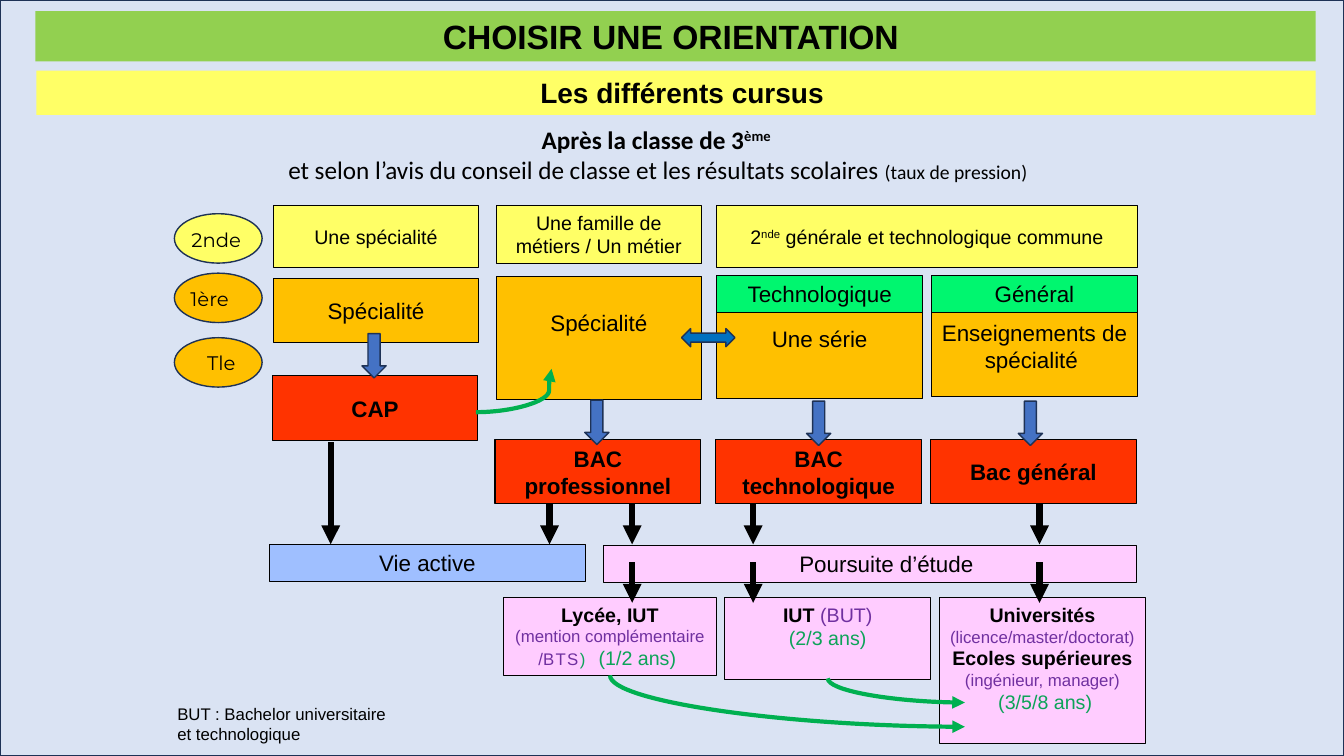
from lxml.etree import SubElement
from pptx import Presentation
from pptx.dml.color import RGBColor
from pptx.enum.shapes import MSO_CONNECTOR as Link, MSO_SHAPE as Preset
from pptx.enum.text import MSO_ANCHOR as Anchor, MSO_AUTO_SIZE as AutoSize, PP_ALIGN as Align
from pptx.oxml.ns import qn
from pptx.util import Inches, Pt

WIDTH, HEIGHT = 13.33, 7.5

# Grid: one column per course of study, one row per stage
CAP, PRO, TECH, GENERAL = 2.71, 4.92, 7.11, 9.24
COLUMN = 2.04
SECOND, FIRST, DIPLOMA, OUTCOME, STUDIES = 2.04, 2.73, 4.36, 5.4, 5.93
DIPLOMA_HEIGHT, BAR_HEIGHT = 0.64, 0.37
DIPLOMA_END = DIPLOMA + DIPLOMA_HEIGHT

BLACK, NAVY = "000000", "1E3256"
YELLOW, ORANGE, RED, PINK = "FFFF66", "FFC000", "FF3300", "FFCCFF"
MINT, GREEN, PURPLE = "00F66F", "00B050", "7030A0"

DETAIL = dict(size=12, color=PURPLE, bold=False)
YEARS = dict(color="0DA358", bold=False)
RAISED = dict(baseline=30000)


def color_of(code):
    return RGBColor.from_string(code)


def write(shape, *paragraphs, size=16, color=BLACK, bold=False, font="Arial",
          align=Align.CENTER, anchor=Anchor.MIDDLE, left=0.1, top=0.05):
    """Each paragraph is a string or a list of strings and (string, format) pairs."""
    frame = shape.text_frame
    frame.word_wrap, frame.auto_size = True, AutoSize.NONE
    frame.vertical_anchor = anchor
    frame.margin_left, frame.margin_right = Inches(left), Inches(0.1)
    frame.margin_top, frame.margin_bottom = Inches(top), Inches(0.05)
    for number, content in enumerate(paragraphs):
        para = frame.add_paragraph() if number else frame.paragraphs[0]
        para.alignment = align
        for piece in [content] if isinstance(content, str) else content:
            words, special = (piece, {}) if isinstance(piece, str) else piece
            span = para.add_run()
            span.text = words
            span.font.name = font
            span.font.size = Pt(special.get("size", size))
            span.font.bold = special.get("bold", bold)
            span.font.color.rgb = color_of(special.get("color", color))
            for name in ("baseline", "spc"):
                if name in special:
                    span._r.get_or_add_rPr().set(name, str(special[name]))


def draw(slide, preset, x, y, width, height, fill, line=BLACK, weight=0.75):
    shape = slide.shapes.add_shape(preset, *map(Inches, (x, y, width, height)))
    shape.shadow.inherit = False
    shape.fill.solid()
    shape.fill.fore_color.rgb = color_of(fill)
    if line:
        shape.line.color.rgb = color_of(line)
        shape.line.width = Pt(weight)
    else:
        shape.line.fill.background()
    return shape


def box(slide, x, y, width, height, fill, *paragraphs, line=BLACK, **style):
    write(draw(slide, Preset.RECTANGLE, x, y, width, height, fill, line), *paragraphs, **style)


def label(slide, x, y, width, height, *paragraphs, **style):
    write(slide.shapes.add_textbox(*map(Inches, (x, y, width, height))), *paragraphs,
          anchor=Anchor.TOP, **style)


def arrow(slide, start, end, kind=Link.STRAIGHT, color=BLACK, weight=4.5):
    link = slide.shapes.add_connector(kind, *map(Inches, (*start, *end)))
    link.line.color.rgb = color_of(color)
    link.line.width = Pt(weight)
    SubElement(link.line._get_or_add_ln(), qn("a:tailEnd"), type="triangle")
    SubElement(link._element.spPr, qn("a:effectLst"))
    return link


def swoop(slide, start, end):
    """Curve that leaves downwards and arrives from the left: a quarter turn, mirrored."""
    (x1, y1), (x2, y2) = start, end
    middle_x, middle_y = (x1 + x2) / 2, (y1 + y2) / 2
    half_width, half_height = (y2 - y1) / 2, (x2 - x1) / 2
    link = arrow(slide, (middle_x + half_width, middle_y - half_height),
                 (middle_x - half_width, middle_y + half_height), Link.CURVE, GREEN, 3)
    properties = link._element.spPr
    properties.find(qn("a:xfrm")).set("rot", str(270 * 60000))
    properties.find(qn("a:prstGeom")).set("prst", "curvedConnector2")


def rise(slide, start, end, bend):
    """Curve that leaves rightwards and turns up near its end."""
    link = arrow(slide, start, end, Link.CURVE, GREEN, 3)
    guides = link._element.spPr.find(qn("a:prstGeom")).find(qn("a:avLst"))
    SubElement(guides, qn("a:gd"), name="adj1", fmla=f"val {bend}")


def add_headings(slide):
    draw(slide, Preset.RECTANGLE, 0, 0, WIDTH, HEIGHT, "DAE3F3", NAVY, 1)
    title = slide.shapes.title
    slide.shapes._spTree.append(title._element)  # in front of the backdrop
    title.left, title.top, title.width, title.height = map(Inches, (0.35, 0.11, 12.7, 0.5))
    title.fill.solid()
    title.fill.fore_color.rgb = color_of("92D050")
    write(title, "CHOISIR UNE ORIENTATION ", size=24, bold=True)
    box(slide, 0.36, 0.7, 12.69, 0.44, YELLOW, "Les différents cursus",
        line=None, size=20, bold=True, left=0.22)
    label(slide, 1.95, 1.18, 9.15, 0.71,
          ["Après la classe de 3", ("ème ", RAISED)],
          [("et selon l’avis du conseil de classe et les résultats scolaires ", dict(bold=False)),
           ("(taux de pression)", dict(size=14, bold=False))],
          size=18, bold=True, font="Calibri")


def add_levels(slide):
    for name, y, fill, x, shift, align in (
            ("2nde", 2.12, YELLOW, 1.8, 0.09, Align.LEFT),
            ("1ère", 2.71, ORANGE, 1.79, 0.09, Align.LEFT),
            ("Tle", 3.35, ORANGE, 1.76, 0.08, Align.CENTER)):
        draw(slide, Preset.OVAL, 1.73, y, 0.87, 0.49, fill, NAVY, 1)
        label(slide, x, y + shift, 0.87, 0.34, name, size=14, font="Montserrat", align=align)


def add_courses(slide):
    # Seconde
    box(slide, CAP, SECOND, COLUMN, 0.61, YELLOW, "Une spécialité", size=14)
    box(slide, PRO, SECOND, COLUMN, 0.57, YELLOW, "Une famille de métiers / Un métier", size=14)
    box(slide, TECH, SECOND, GENERAL + COLUMN - TECH, 0.61, YELLOW,
        ["2", ("nde", RAISED), " générale et technologique commune"], size=14)
    # Première and terminale
    box(slide, CAP, 2.76, COLUMN, 0.64, ORANGE, "Spécialité")
    for x, y, height, words, top in ((PRO, 2.74, 1.22, "Spécialité", 0.33),
                                     (TECH, 3.04, 0.91, "Une série", 0.19),
                                     (GENERAL, 3.09, 0.84, "Enseignements de spécialité ", 0.08)):
        box(slide, x, y, COLUMN, height, ORANGE, words, anchor=Anchor.TOP, top=top)
    for x, words in ((TECH, "Technologique"), (GENERAL, "Général")):
        box(slide, x, FIRST, COLUMN, BAR_HEIGHT, MINT, words)
    # Diplomas
    for x, y, words in ((CAP, 3.73, "CAP"), (PRO, DIPLOMA, "BAC professionnel"),
                        (TECH, DIPLOMA, "BAC technologique"), (GENERAL, DIPLOMA, "Bac général")):
        box(slide, x - 0.01, y, COLUMN, DIPLOMA_HEIGHT, RED, words, bold=True)


def add_outcomes(slide):
    box(slide, 2.67, OUTCOME, 3.14, BAR_HEIGHT, "9FBFFF", "Vie active")
    box(slide, 5.99, OUTCOME + 0.01, 5.28, BAR_HEIGHT, PINK, "Poursuite d’étude", left=0.42)
    vocational = ["Lycée, IUT"], [("(mention complémentaire", DETAIL)], [
        ("/", DETAIL), ("BTS", DETAIL | dict(spc=100)),
        (") ", DETAIL | YEARS | dict(spc=300)), ("(1/2 ans) ", YEARS)]
    technical = ["IUT ", ("(BUT)", dict(color=PURPLE, bold=False))], [("(2/3 ans)", YEARS)]
    academic = (["Universités"], [("(licence/master/doctorat) ", DETAIL)],
                ["Ecoles supérieures"], [("(ingénieur, manager)", DETAIL)],
                [(" (3/5/8 ans)", YEARS)])
    for x, width, height, paragraphs in ((4.99, 2.12, 0.77, vocational),
                                         (7.19, COLUMN, 0.81, technical),
                                         (9.32, COLUMN, 1.45, academic)):
        box(slide, x, STUDIES, width, height, PINK, *paragraphs,
            size=14, bold=True, anchor=Anchor.TOP)
    label(slide, 1.66, 6.93, 2.28, 0.5, "BUT : Bachelor universitaire et technologique",
          size=12, align=Align.LEFT)


def add_arrows(slide):
    # From courses to diplomas
    for x, y in ((3.59, 3.31), (5.8, 3.97), (8, 3.98), (10.1, 3.98)):
        draw(slide, Preset.DOWN_ARROW, x, y, 0.24, 0.44, "4472C4", NAVY, 1)
    draw(slide, Preset.LEFT_RIGHT_ARROW, 6.76, 3.26, 0.53, 0.18, "0070C0", NAVY, 1)
    # From diplomas to outcomes, then to studies
    arrow(slide, (3.28, 4.39), (3.28, OUTCOME))
    for x in (5.45, 6.27, 7.47, 10.31):
        arrow(slide, (x, DIPLOMA_END), (x, OUTCOME))
    for x in (6.27, 7.47, 10.31):
        arrow(slide, (x, 5.58), (x, 5.98))
    # Bridges between courses
    rise(slide, (4.72, 4.09), (5.47, 3.66), 96800)
    swoop(slide, (6.05, 6.7), (9.57, 7.21))
    swoop(slide, (8.21, 6.73), (9.57, 6.97))


def main():
    deck = Presentation()
    deck.slide_width, deck.slide_height = Inches(WIDTH), Inches(HEIGHT)
    slide = deck.slides.add_slide(deck.slide_layouts[5])
    for add_part in (add_headings, add_levels, add_courses, add_outcomes, add_arrows):
        add_part(slide)
    deck.save("out.pptx")


if __name__ == "__main__":
    main()
